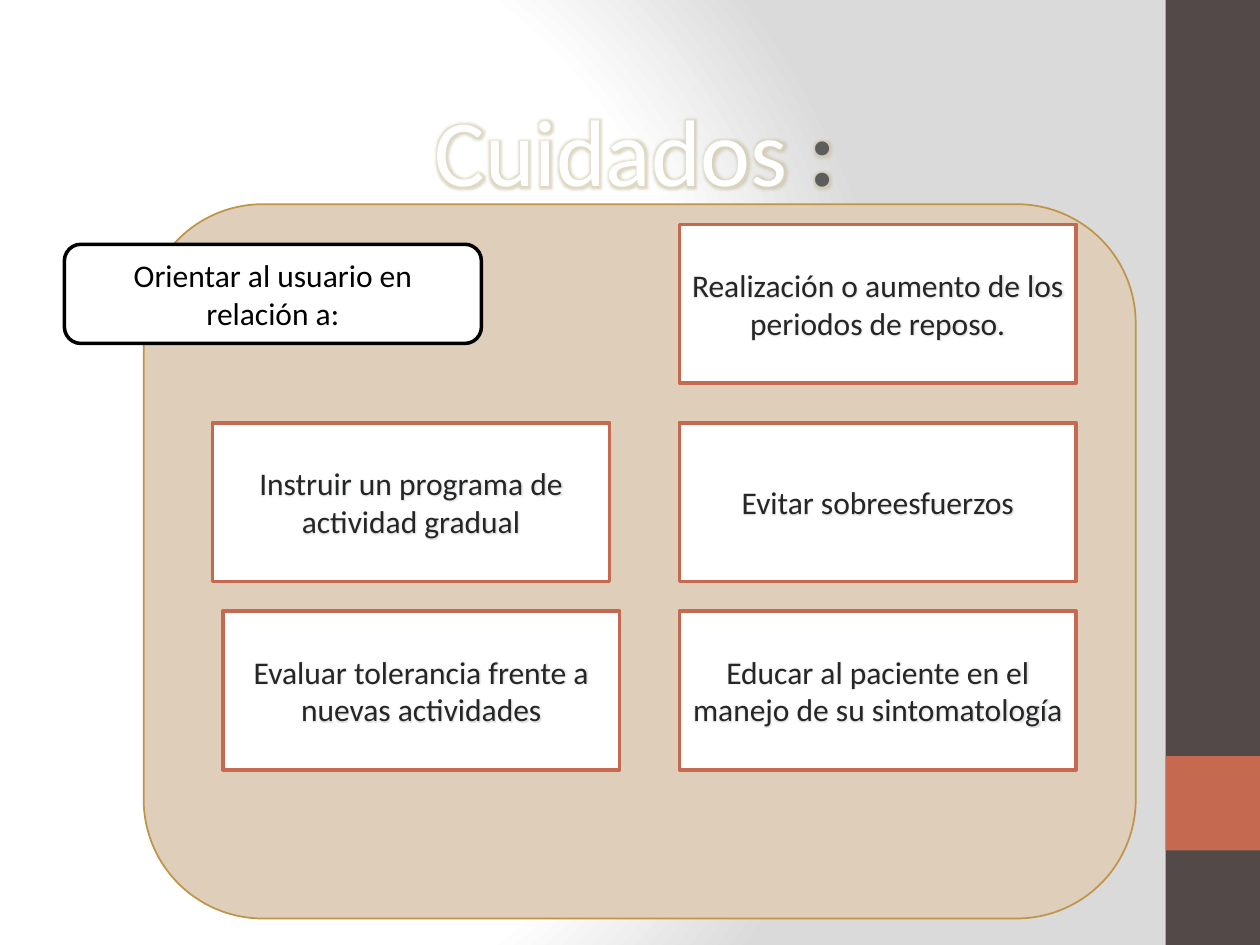
from lxml.etree import SubElement
from pptx import Presentation
from pptx.dml.color import RGBColor
from pptx.enum.shapes import MSO_SHAPE
from pptx.enum.text import MSO_ANCHOR, MSO_AUTO_SIZE, PP_ALIGN
from pptx.oxml.ns import qn
from pptx.util import Pt

# Content
TITLE = [("Cuidados", "white", False), (" :", "gray", True)]
LABEL = "Orientar al usuario en relación a:"
CARDS = [  # text, left, row
    ("Realización o aumento de los periodos de reposo.", 388.2, 0),
    ("Evitar sobreesfuerzos", 388.2, 1),
    ("Educar al paciente en el manejo de su sintomatología", 388.2, 2),
    ("Instruir un programa de actividad gradual", 121.5, 1),
    ("Evaluar tolerancia frente a nuevas actividades", 127.3, 2),
]
TOPS = [128.2, 241.6, 349.2]
CARD = (226.8, 90.7)
HEX = {"white": "FFFFFF", "gray": "5D5D5D", "black": "000000", "ink": "262626",
       "dark": "534949", "red": "C66951", "tan": "DFCEBA", "gold": "BE9549",
       "fog": "DADADA", "glow": "C9C0A0", "shade": "8A929C"}
BACK = [(0, "white"), (75, "white"), (100, "fog")]
FOCUS = {"l": 20, "t": 50, "r": 100, "b": 50}


def rgb(name):
    return RGBColor.from_string(HEX[name])


def tint(node, name, alpha=100):
    clr = SubElement(node, qn("a:srgbClr"), val=HEX[name])
    if alpha < 100:
        SubElement(clr, qn("a:alpha"), val=str(alpha * 1000))


def add_run(para, text, size, color, bold=False):
    run = para.add_run()
    run.text = text
    font = run.font
    font.size, font.bold = Pt(size), bold
    font.color.rgb = rgb(color)
    font.name = "Calibri"
    return run


def add_glow(run, rad, color, alpha, cast=False):
    prop = run.font._element if hasattr(run.font, "_element") else run._r.get_or_add_rPr()
    fx = SubElement(prop, qn("a:effectLst"))
    prop.find(qn("a:latin")).addprevious(fx)
    tint(SubElement(fx, qn("a:glow"), rad=str(Pt(rad))), color, alpha)
    if cast:
        drop = SubElement(fx, qn("a:outerShdw"), blurRad=str(Pt(2)),
                          dist=str(Pt(1.5)), dir="2700000")
        tint(drop, color, 60)


def add_box(kind, x, y, w, h, fill, line=None, width=2):
    box = slide.shapes.add_shape(kind, Pt(x), Pt(y), Pt(w), Pt(h))
    box.shadow.inherit = False
    box.fill.solid()
    box.fill.fore_color.rgb = rgb(fill)
    if line:
        box.line.color.rgb = rgb(line)
        box.line.width = Pt(width)
    else:
        box.line.fill.background()
    return box


def write(box, text, color):
    frame = box.text_frame
    frame.word_wrap = True
    frame.vertical_anchor = MSO_ANCHOR.MIDDLE
    para = frame.paragraphs[0]
    para.alignment = PP_ALIGN.CENTER
    return add_run(para, text, 18, color)


deck = Presentation()
deck.slide_width, deck.slide_height = Pt(720), Pt(540)
slide = deck.slides.add_slide(deck.slide_layouts[6])

# Background: circular gradient
slide.background.fill.gradient()
grad = slide.element.find(".//" + qn("a:gradFill"))
for child in list(grad):
    grad.remove(child)
stops = SubElement(grad, qn("a:gsLst"))
for pos, name in BACK:
    tint(SubElement(stops, qn("a:gs"), pos=str(pos * 1000)), name)
ring = SubElement(grad, qn("a:path"), path="circle")
SubElement(ring, qn("a:fillToRect"), {k: str(v * 1000) for k, v in FOCUS.items()})

# Side band and panel
add_box(MSO_SHAPE.RECTANGLE, 666, 0, 54, 540, "dark")
add_box(MSO_SHAPE.RECTANGLE, 666, 432, 54, 54, "red")
add_box(MSO_SHAPE.ROUNDED_RECTANGLE, 82.1, 116.7, 566.9, 408.2, "tan", "gold", 1)

# Title
head = slide.shapes.add_textbox(Pt(184.3), Pt(49), Pt(357.1), Pt(72.7)).text_frame
head.word_wrap = True
head.auto_size = MSO_AUTO_SIZE.SHAPE_TO_FIT_TEXT
head.paragraphs[0].alignment = PP_ALIGN.CENTER
for text, color, bold in TITLE:
    add_glow(add_run(head.paragraphs[0], text, 54, color, bold), 5, "glow", 60)

# Cards
for text, left, row in CARDS:
    box = add_box(MSO_SHAPE.RECTANGLE, left, TOPS[row], *CARD, "white", "red")
    add_glow(write(box, text, "ink"), 1, "shade", 30, cast=True)

# Label
label = add_box(MSO_SHAPE.ROUNDED_RECTANGLE, 36.8, 139.6, 238.3, 56.7, "white", "black")
write(label, LABEL, "black")

deck.save("out.pptx")
